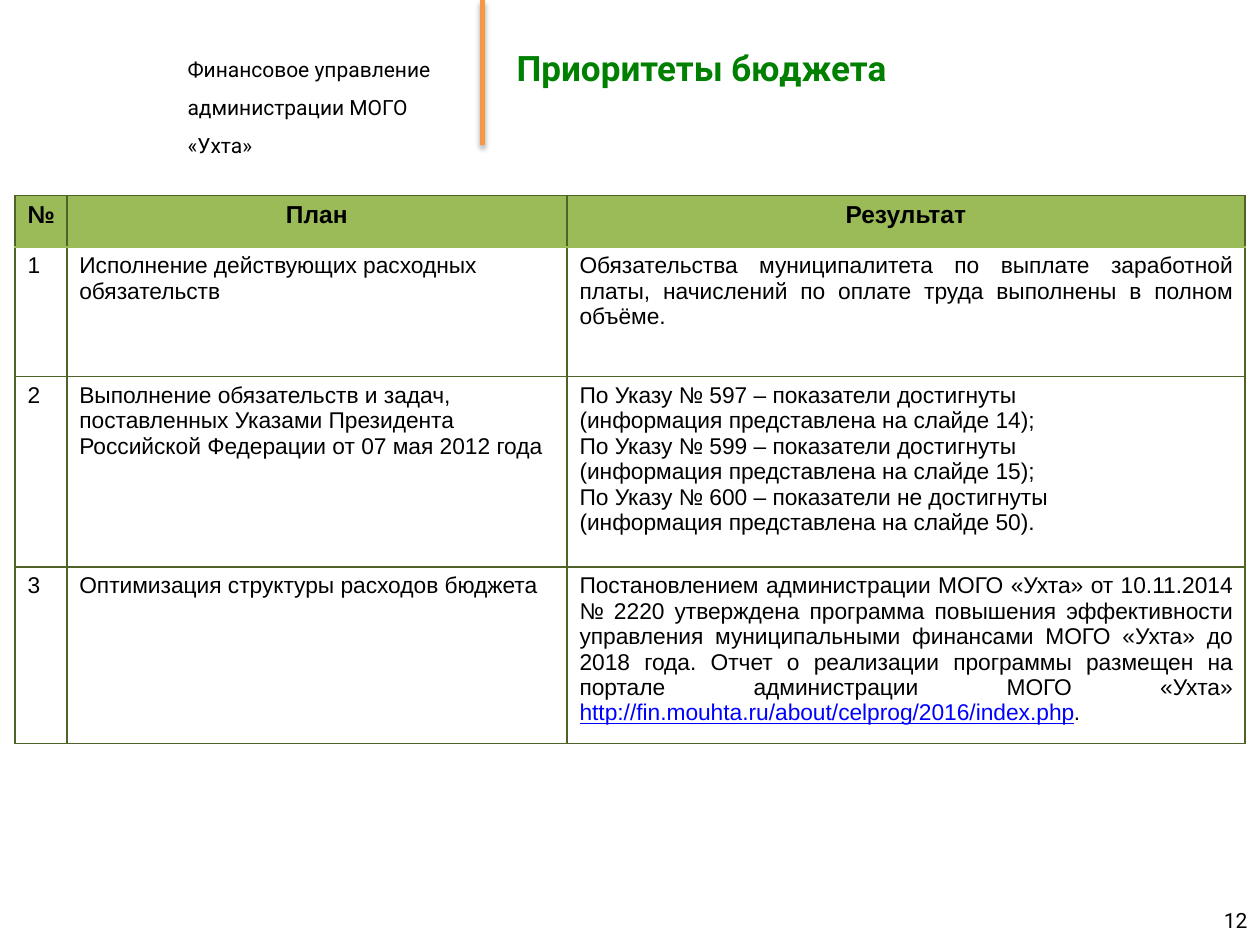
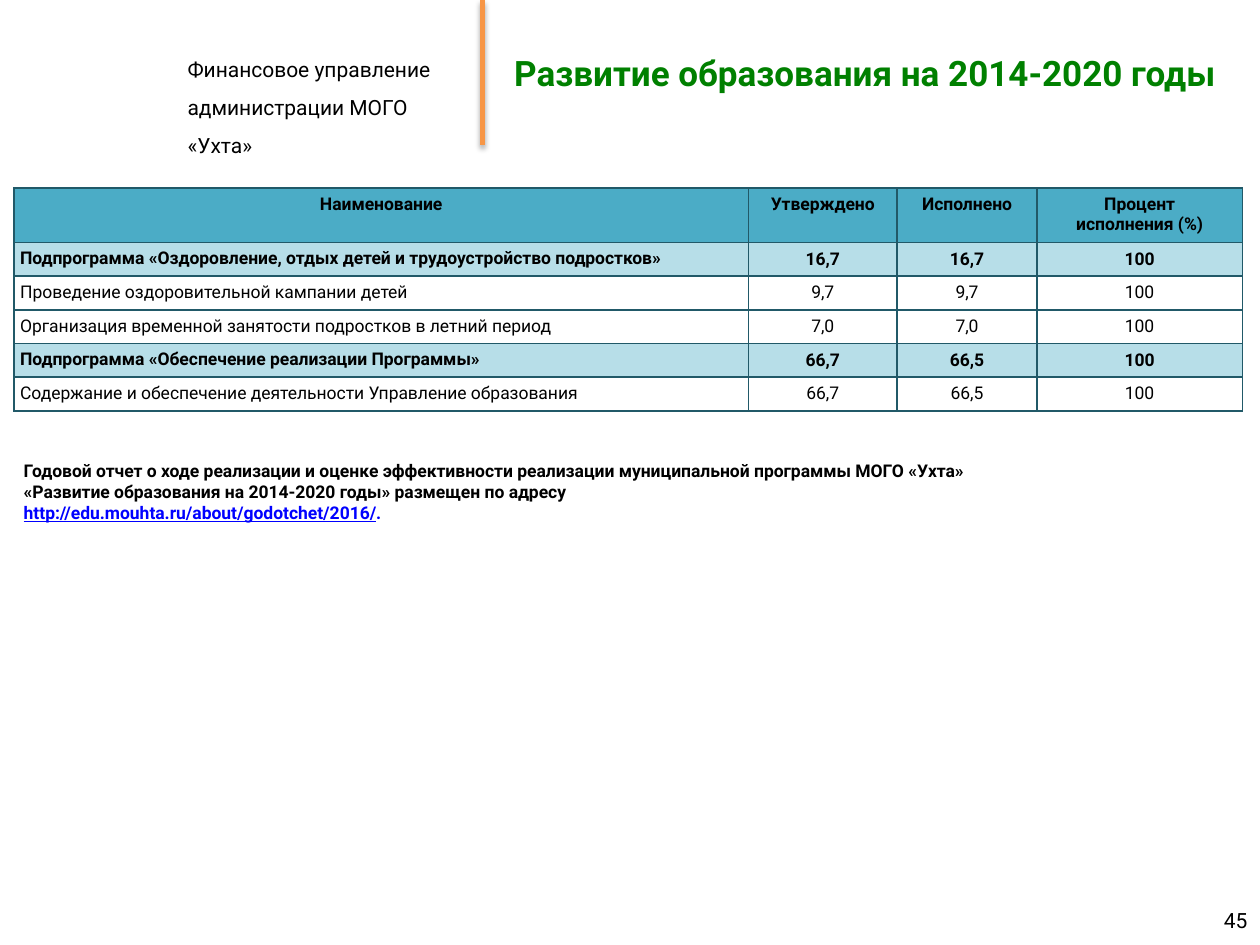
from dataclasses import dataclass

from lxml.etree import SubElement
from pptx import Presentation
from pptx.dml.color import RGBColor
from pptx.enum.shapes import MSO_CONNECTOR
from pptx.enum.text import MSO_ANCHOR, PP_ALIGN
from pptx.oxml.ns import qn
from pptx.util import Inches, Pt

LEFT, MID, RIGHT, FULL = (
    PP_ALIGN.LEFT, PP_ALIGN.CENTER, PP_ALIGN.RIGHT, PP_ALIGN.JUSTIFY)


@dataclass(frozen=True)
class Theme:
    body: str = "Roboto"
    plain: str = "Arial"
    black: str = "000000"
    white: str = "FFFFFF"
    green: str = "008000"
    orange: str = "F79646"
    link: str = "0000FF"
    olive: str = "9BBB59"
    moss: str = "4F6228"
    teal: str = "4BACC6"
    pale: str = "B7DEE8"
    navy: str = "215968"
    title: int = 20
    head: int = 14
    cell: int = 13
    note: int = 12
    small: int = 10


T = Theme()


@dataclass(frozen=True)
class Style:
    size: int
    font: str = T.body
    color: str = T.black
    bold: bool = False
    align: PP_ALIGN = LEFT
    space: float = 1.0


@dataclass(frozen=True)
class Span:
    text: str
    color: str = T.black
    under: bool = False


def write(frame, paras, style):
    for i, para in enumerate(paras):
        line = frame.paragraphs[0] if i == 0 else frame.add_paragraph()
        line.alignment = style.align
        line.line_spacing = style.space
        spans = [Span(para, style.color)] if isinstance(para, str) else para
        for span in spans:
            run = line.add_run()
            run.text = span.text
            font = run.font
            font.name, font.size = style.font, Pt(style.size)
            font.bold, font.underline = style.bold, span.under
            font.color.rgb = RGBColor.from_string(span.color)


def add_text(slide, box, paras, style, anchor=MSO_ANCHOR.TOP):
    frame = slide.shapes.add_textbox(*map(Inches, box)).text_frame
    frame.word_wrap = True
    frame.vertical_anchor = anchor
    write(frame, paras, style)


def add_rule(slide):
    x = Inches(3.83)
    rule = slide.shapes.add_connector(
        MSO_CONNECTOR.STRAIGHT, x, 0, x, Inches(1.15))
    rule.line.color.rgb = RGBColor.from_string(T.orange)
    rule.line.width = Pt(3)
    effects = SubElement(rule._element.spPr, qn("a:effectLst"))
    shade = SubElement(
        effects, qn("a:outerShdw"), blurRad=str(Pt(3.1)), dist=str(Pt(1.8)),
        dir="5400000", rotWithShape="0")
    color = SubElement(shade, qn("a:srgbClr"), val=T.black)
    SubElement(color, qn("a:alpha"), val="35000")


def add_page(deck, title, box, number, align=LEFT):
    slide = deck.slides.add_slide(deck.slide_layouts[5])
    add_text(slide, (1.39, 0.3, 2.4, 0.66),
             ["Финансовое управление", "администрации МОГО «Ухта»"],
             Style(T.note, space=1.5))
    add_rule(slide)
    head = slide.shapes.title
    head.left, head.top, head.width, head.height = map(Inches, box)
    head.text_frame.vertical_anchor = MSO_ANCHOR.MIDDLE
    write(head.text_frame, [title],
          Style(T.title, color=T.green, bold=True, align=align))
    add_text(slide, (7.67, 7.1, 2.33, 0.4), [number],
             Style(T.note, align=RIGHT), MSO_ANCHOR.MIDDLE)
    return slide


def add_grid(slide, left, top, cols, rows):
    shape = slide.shapes.add_table(
        len(rows), len(cols), Inches(left), Inches(top),
        Inches(sum(cols)), Inches(sum(rows)))
    table = shape.table
    table.first_row = table.horz_banding = False
    for col, width in zip(table.columns, cols):
        col.width = Inches(width)
    for row, height in zip(table.rows, rows):
        row.height = Inches(height)
    return table


def edge(cell, color, **other):
    props = cell._tc.get_or_add_tcPr()
    for side in "LRTB":
        line = SubElement(props, qn(f"a:ln{side}"), w=str(Pt(1)))
        fill = SubElement(line, qn("a:solidFill"))
        SubElement(fill, qn("a:srgbClr"), val=other.get(side, color))


def paint(cell, color):
    if color:
        cell.fill.solid()
        cell.fill.fore_color.rgb = RGBColor.from_string(color)
    else:
        cell.fill.background()


def add_goals(slide):
    rows = [
        (["№"], ["План"], ["Результат"]),
        (["1"], ["Исполнение действующих расходных обязательств"],
         ["Обязательства муниципалитета по выплате заработной платы, "
          "начислений по оплате труда выполнены в полном объёме."]),
        (["2"], ["Выполнение обязательств и задач, поставленных Указами "
                 "Президента Российской Федерации от 07 мая 2012 года"],
         ["По Указу № 597 – показатели достигнуты",
          "(информация представлена на слайде 14);",
          "По Указу № 599 – показатели достигнуты",
          "(информация представлена на слайде 15);",
          "По Указу № 600 – показатели не достигнуты",
          "(информация представлена на слайде 50)."]),
        (["3"], ["Оптимизация структуры расходов бюджета"],
         [[Span("Постановлением администрации МОГО «Ухта» от 10.11.2014 "
                "№ 2220 утверждена программа повышения эффективности "
                "управления муниципальными финансами МОГО «Ухта» до 2018 "
                "года. Отчет о реализации программы размещен на портале "
                "администрации МОГО «Ухта» "),
           Span("http://fin.mouhta.ru/about/celprog/2016/index.php",
                T.link, True),
           Span(".")]]),
    ]
    table = add_grid(slide, 0.12, 1.55, [0.41, 3.97, 5.38],
                     [0.41, 1.03, 1.51, 1.31])
    top = Style(T.head, T.plain, bold=True, align=MID)
    left = Style(T.cell, T.plain)
    full = Style(T.cell, T.plain, align=FULL)
    for r, row in enumerate(rows):
        seam = {0: {"B": T.olive}, 1: {"T": T.olive}}.get(r, {})
        for c, paras in enumerate(row):
            cell = table.cell(r, c)
            edge(cell, T.moss, **seam)
            paint(cell, T.white if r else T.olive)
            wide = c == 2 and len(paras) == 1
            write(cell.text_frame, paras,
                  top if r == 0 else full if wide else left)


def add_costs(slide):
    rows = [
        ("Наименование", "Утверждено", "Исполнено", "Процент\nисполнения (%)"),
        ("Подпрограмма «Оздоровление, отдых детей и трудоустройство "
         "подростков»", "16,7", "16,7", "100"),
        ("Проведение оздоровительной кампании детей", "9,7", "9,7", "100"),
        ("Организация временной занятости подростков в летний период",
         "7,0", "7,0", "100"),
        ("Подпрограмма «Обеспечение реализации Программы»",
         "66,7", "66,5", "100"),
        ("Содержание и обеспечение деятельности Управление образования",
         "66,7", "66,5", "100"),
    ]
    table = add_grid(slide, 0.11, 1.49, [5.83, 1.18, 1.11, 1.63],
                     [0.42] + [0.26] * 5)
    for r, row in enumerate(rows):
        group = row[0].startswith("Подпрограмма")
        fill = T.teal if r == 0 else T.pale if group else None
        for c, text in enumerate(row):
            cell = table.cell(r, c)
            cell.margin_left = cell.margin_right = Inches(0.05)
            cell.margin_top = cell.margin_bottom = Inches(0.05)
            if group and c:
                cell.vertical_anchor = MSO_ANCHOR.MIDDLE
            edge(cell, T.navy)
            paint(cell, fill)
            write(cell.text_frame, text.split("\n"),
                  Style(T.small, bold=bool(fill),
                        align=MID if c or r == 0 else LEFT))


def main():
    deck = Presentation()
    deck.slide_width, deck.slide_height = Inches(10), Inches(7.5)

    goals = add_page(deck, "Приоритеты бюджета",
                     (4, 0.03, 4.88, 1.01), "12", FULL)
    add_goals(goals)

    costs = add_page(deck, "Развитие образования на 2014-2020 годы",
                     (3.98, 0, 6.02, 1.15), "45")
    add_costs(costs)
    add_text(costs, (0.09, 3.6, 9.8, 0.6), [
        "Годовой отчет о ходе реализации и оценке эффективности реализации "
        "муниципальной программы МОГО «Ухта»",
        "«Развитие образования на 2014-2020 годы» размещен по адресу",
        [Span("http://edu.mouhta.ru/about/godotchet/2016/", T.link, True),
         Span(".", T.link)],
    ], Style(T.small, bold=True))

    deck.save("out.pptx")


if __name__ == "__main__":
    main()
